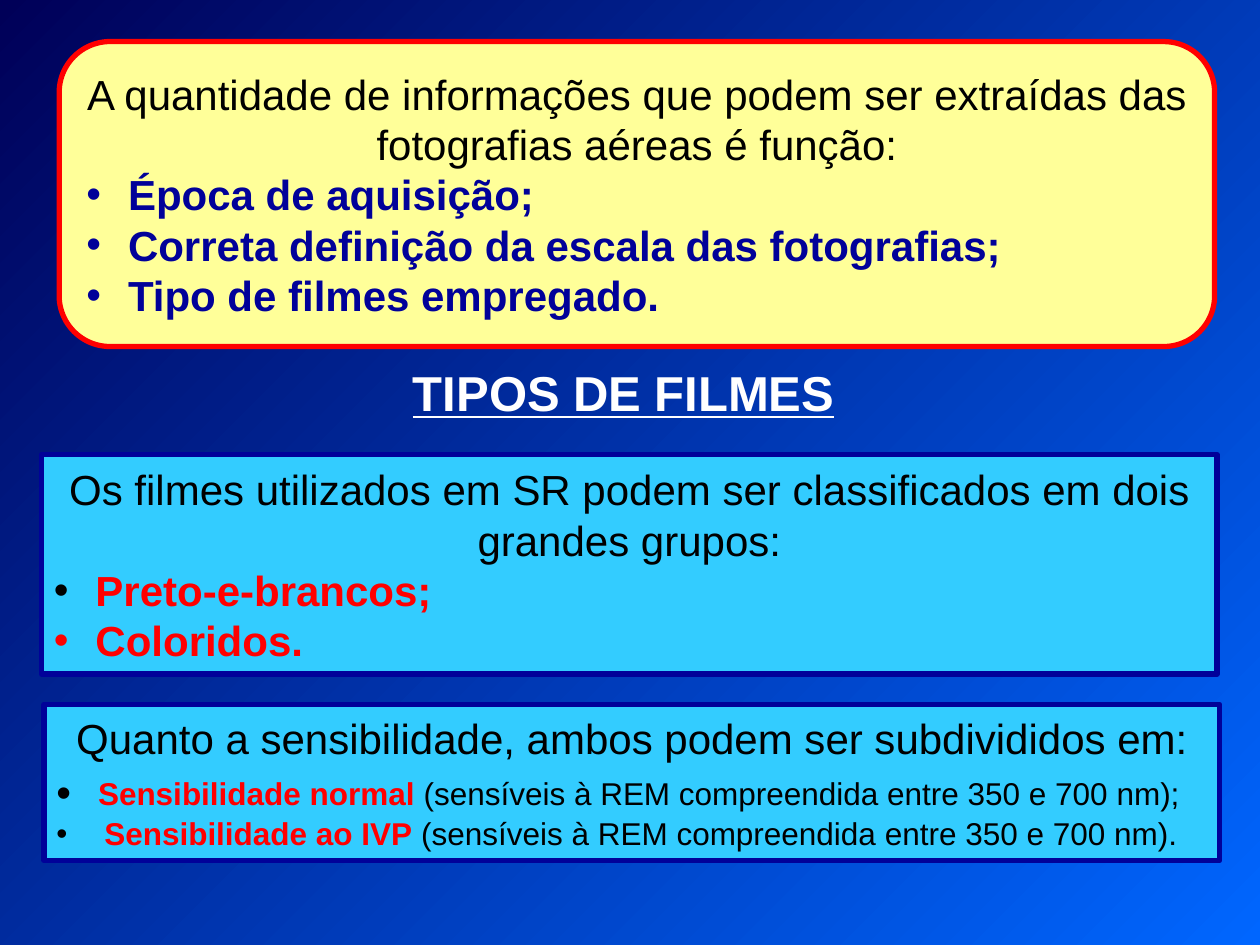
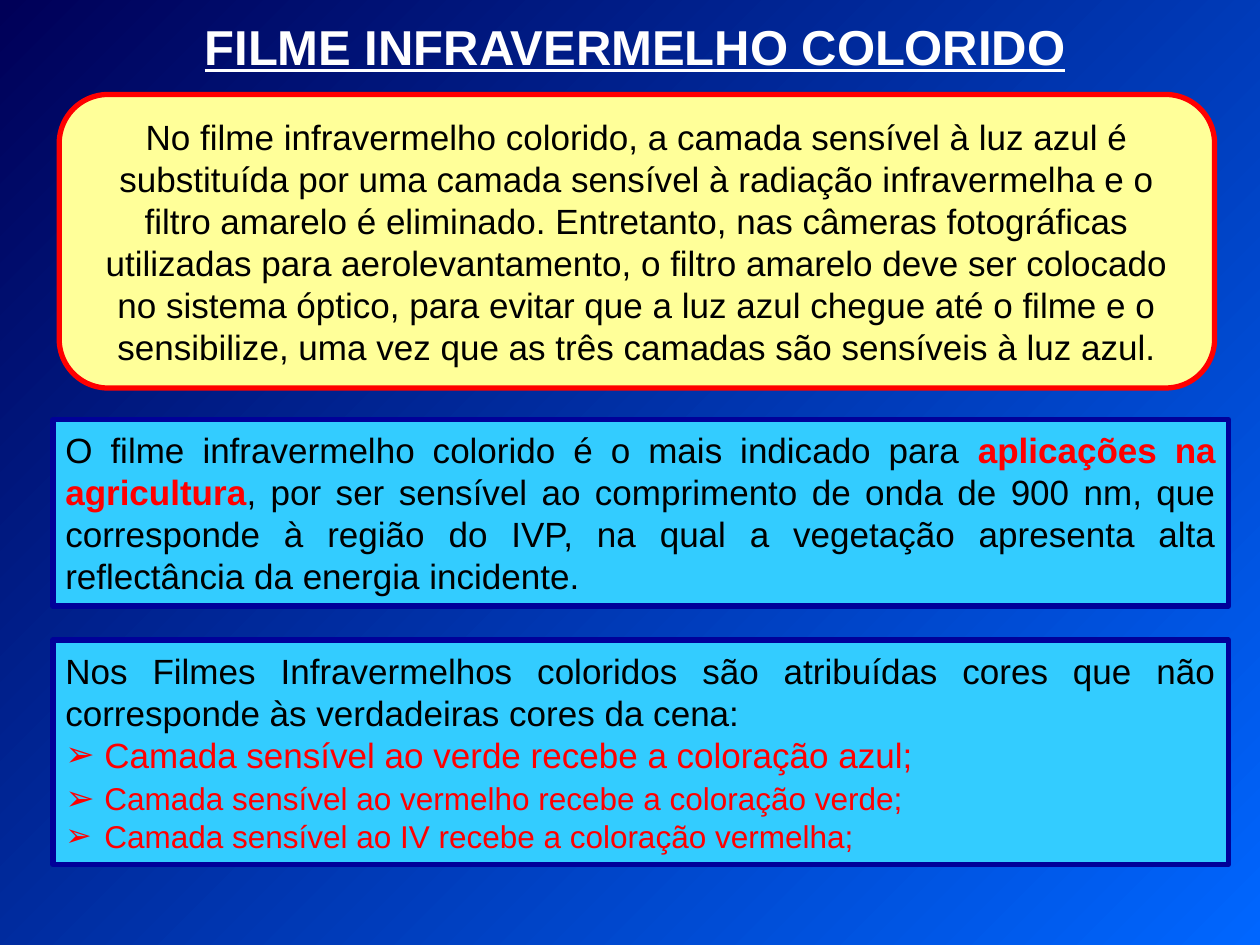
from lxml import etree
from pptx import Presentation
from pptx.dml.color import RGBColor
from pptx.enum.shapes import MSO_SHAPE as SHAPE
from pptx.enum.text import MSO_ANCHOR as ANCHOR, PP_ALIGN as ALIGN
from pptx.oxml.ns import qn
from pptx.util import Inches, Pt

NIGHT = RGBColor(0x00, 0x00, 0x58)
AZURE = RGBColor(0x00, 0x66, 0xFF)
YELLOW = RGBColor(0xFF, 0xFF, 0x99)
CYAN = RGBColor(0x33, 0xCC, 0xFF)
NAVY = RGBColor(0x01, 0x01, 0x99)
RED = RGBColor(0xFF, 0x00, 0x00)
BLACK = RGBColor(0x00, 0x00, 0x00)
WHITE = RGBColor(0xFF, 0xFF, 0xFF)
FONT = "Arial"
BOX_WIDTH = 9.33


class Deck:
    def __init__(self):
        self.prs = Presentation()
        self.prs.slide_width, self.prs.slide_height = Inches(10), Inches(7.5)
        self.s = None
        fill = self.prs.slide_master.background.fill
        fill.gradient()
        fill.gradient_angle = 315
        for stop, color in zip(fill.gradient_stops, (NIGHT, AZURE)):
            stop.color.rgb = color

    def new_slide(self):
        self.s = self.prs.slides.add_slide(self.prs.slide_layouts[6])

    def title(self, text, left, top):
        sp = self.s.shapes.add_textbox(Inches(left), Inches(top), Inches(10.1), Inches(0.57))
        tf = sp.text_frame
        tf.word_wrap = True
        p = self.paragraph(tf, [(text, WHITE, True)], 28)
        p.runs[0].font.underline = True

    def panel(self, kind, left, top, width, height, fill, line):
        sp = self.s.shapes.add_shape(kind, Inches(left), Inches(top), Inches(width), Inches(height))
        sp.shadow.inherit = False
        sp.fill.solid()
        sp.fill.fore_color.rgb = fill
        sp.line.color.rgb = line
        sp.line.width = Pt(3)
        tf = sp.text_frame
        tf.word_wrap = True
        tf.vertical_anchor = ANCHOR.MIDDLE
        return tf

    def yellow_panel(self, top, height):
        return self.panel(SHAPE.FLOWCHART_ALTERNATE_PROCESS, 0.47, top, 9.17, height, YELLOW, RED)

    def blue_panel(self, left, top, height):
        return self.panel(SHAPE.RECTANGLE, left, top, BOX_WIDTH, height, CYAN, NAVY)

    def paragraph(self, tf, runs, size, align=ALIGN.CENTER):
        """Fill the empty first paragraph or add one; runs are (text, colour, bold)."""
        p = tf.add_paragraph() if tf.text else tf.paragraphs[0]
        p.alignment = align
        for text, color, bold in runs:
            r = p.add_run()
            r.text = text
            r.font.name = FONT
            r.font.size = Pt(size)
            r.font.bold = bold
            r.font.color.rgb = color
        return p

    def bullet(self, tf, runs, size, color, char="•", indent=0.33, scale=100, before=0, after=0):
        """Add a hanging bullet; scale is the mark's size in percent of the text."""
        p = self.paragraph(tf, runs, size, ALIGN.LEFT)
        p.space_before, p.space_after = Pt(before), Pt(after)
        pPr = p._p.get_or_add_pPr()
        pPr.set("marL", str(Inches(indent)))
        pPr.set("indent", str(-Inches(indent)))
        clr = etree.SubElement(pPr, qn("a:buClr"))
        etree.SubElement(clr, qn("a:srgbClr"), val=str(color))
        etree.SubElement(pPr, qn("a:buSzPct"), val=str(scale * 1000))
        etree.SubElement(pPr, qn("a:buFont"), typeface=FONT)
        etree.SubElement(pPr, qn("a:buChar"), char=char)


def film_types(deck):
    deck.new_slide()
    tf = deck.yellow_panel(0.33, 2.42)
    deck.paragraph(tf, [("A quantidade de informações que podem ser extraídas das "
                         "fotografias aéreas é função:", BLACK, False)], 24)
    for text in ("Época de aquisição;", "Correta definição da escala das fotografias;",
                 "Tipo de filmes empregado."):
        deck.bullet(tf, [(text, NAVY, True)], 24, NAVY)

    deck.title("TIPOS DE FILMES", -0.1, 2.83)

    tf = deck.blue_panel(0.33, 3.61, 1.74)
    deck.paragraph(tf, [("Os filmes utilizados em SR podem ser classificados em dois "
                         "grandes grupos:", BLACK, False)], 24)
    for text, mark in (("Preto-e-brancos;", BLACK), ("Coloridos.", RED)):
        deck.bullet(tf, [(text, RED, True)], 24, mark)

    tf = deck.blue_panel(0.35, 5.59, 1.24)
    deck.paragraph(tf, [("Quanto a sensibilidade, ambos podem ser subdivididos em:",
                         BLACK, False)], 24)
    for name, end, indent, scale, before, after in (
            ("Sensibilidade normal", ";", 0.33, 133, 6, 1.5),
            ("Sensibilidade ao IVP", ".", 0.38, 100, 0, 0)):
        detail = f" (sensíveis à REM compreendida entre 350 e 700 nm){end}"
        deck.bullet(tf, [(name, RED, True), (detail, BLACK, False)], 18, BLACK,
                    indent=indent, scale=scale, before=before, after=after)


def infrared_film(deck):
    deck.new_slide()
    deck.title("FILME INFRAVERMELHO COLORIDO", -0.01, 0.08)

    tf = deck.yellow_panel(0.75, 2.33)
    deck.paragraph(tf, [(
        "No filme infravermelho colorido, a camada sensível à luz azul é substituída por uma "
        "camada sensível à radiação infravermelha e o filtro amarelo é eliminado. Entretanto, "
        "nas câmeras fotográficas utilizadas para aerolevantamento, o filtro amarelo deve ser "
        "colocado no sistema óptico, para evitar que a luz azul chegue até o filme e o "
        "sensibilize, uma vez que as três camadas são sensíveis à luz azul.", BLACK, False)], 20)

    tf = deck.blue_panel(0.42, 3.33, 1.48)
    deck.paragraph(tf, [
        ("O filme infravermelho colorido é o mais indicado para ", BLACK, False),
        ("aplicações na agricultura", RED, True),
        (", por ser sensível ao comprimento de onda de 900 nm, que corresponde à região do IVP, "
         "na qual a vegetação apresenta alta reflectância da energia incidente.", BLACK, False),
    ], 20, ALIGN.JUSTIFY)

    tf = deck.blue_panel(0.42, 5.08, 1.78)
    deck.paragraph(tf, [("Nos Filmes Infravermelhos coloridos são atribuídas cores que não "
                         "corresponde às verdadeiras cores da cena:", BLACK, False)],
                   20, ALIGN.JUSTIFY)
    for layer, color, size, scale, before in (("verde", "azul", 20, 100, 0),
                                              ("vermelho", "verde", 18, 111, 2),
                                              ("IV", "vermelha", 18, 100, 0)):
        text = f"Camada sensível ao {layer} recebe a coloração {color};"
        deck.bullet(tf, [(text, RED, False)], size, RED, "➢", 0.31, scale, before)


def main():
    deck = Deck()
    film_types(deck)
    infrared_film(deck)
    deck.prs.save("out.pptx")


if __name__ == "__main__":
    main()
